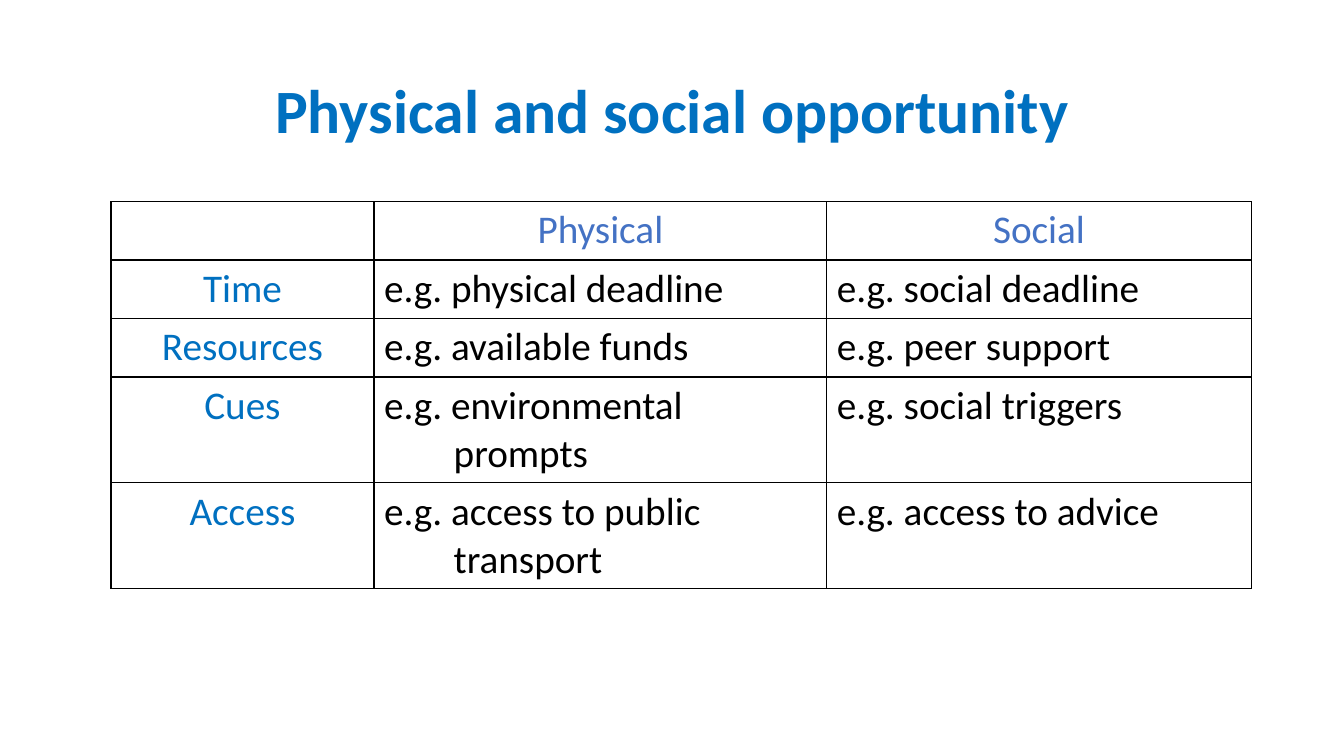
from dataclasses import dataclass

from lxml import etree
from pptx import Presentation
from pptx import util as u
from pptx.dml.color import RGBColor
from pptx.enum import text
from pptx.oxml import ns


@dataclass(frozen=True)
class Theme:
    """Fonts, colours and type sizes of the slide."""
    font: str = "Calibri"
    accent: str = "0070C0"
    header: str = "4472C4"
    ink: str = "000000"
    paper: str = "FFFFFF"
    title_size: int = 44
    table_size: int = 28


THEME = Theme()
COLUMN_WIDTHS = (2.61, 4.49, 4.21)
ROW_HEIGHTS = (0.58, 0.58, 0.58, 1.05, 1.05)
ROWS = (
    ("", "Physical", "Social"),
    ("Time", "e.g. physical deadline", "e.g. social deadline"),
    ("Resources", "e.g. available funds", "e.g. peer support"),
    ("Cues", "e.g. environmental prompts", "e.g. social triggers"),
    ("Access", "e.g. access to public transport", "e.g. access to advice"),
)


def add_run(p, words, size, color, bold=False):
    """Add one formatted run to a paragraph."""
    r = p.add_run()
    r.text = words
    r.font.name = THEME.font
    r.font.size = u.Pt(size)
    r.font.bold = bold
    r.font.color.rgb = RGBColor.from_string(color)


def add_title(s, words):
    """Place and fill the title placeholder."""
    sp = s.shapes.title
    sp.left, sp.top = u.Inches(0.92), u.Inches(0.4)
    sp.width, sp.height = u.Inches(11.5), u.Inches(1.45)
    tf = sp.text_frame
    tf.word_wrap = True
    tf.vertical_anchor = text.MSO_ANCHOR.MIDDLE
    p = tf.paragraphs[0]
    p.alignment = text.PP_ALIGN.CENTER
    p.line_spacing = 0.9
    add_run(p, words, THEME.title_size, THEME.accent, bold=True)


def set_borders(cell):
    """Draw a one-point line on each side of a cell."""
    tc_pr = cell._tc.get_or_add_tcPr()
    for i, side in enumerate(("a:lnL", "a:lnR", "a:lnT", "a:lnB")):
        ln = etree.Element(ns.qn(side), w=str(u.Pt(1)))
        fill = etree.SubElement(ln, ns.qn("a:solidFill"))
        etree.SubElement(fill, ns.qn("a:srgbClr"), val=THEME.ink)
        tc_pr.insert(i, ln)


def fill_cell(cell, words, row, col):
    """Format a cell as a heading or as a hanging example."""
    cell.fill.solid()
    cell.fill.fore_color.rgb = RGBColor.from_string(THEME.paper)
    set_borders(cell)
    if not words:
        return
    p = cell.text_frame.paragraphs[0]
    if row == 0 or col == 0:
        p.alignment = text.PP_ALIGN.CENTER
        color = THEME.header if row == 0 else THEME.accent
    else:
        indent = u.Inches(0.69)
        p_pr = p._p.get_or_add_pPr()
        p_pr.set("marL", str(indent))
        p_pr.set("indent", str(-indent))
        color = THEME.ink
    add_run(p, words, THEME.table_size, color)


def add_grid(s):
    """Add the table of opportunity examples."""
    table = s.shapes.add_table(
        len(ROWS), len(COLUMN_WIDTHS), u.Inches(1.1), u.Inches(2),
        u.Inches(sum(COLUMN_WIDTHS)), u.Inches(sum(ROW_HEIGHTS))).table
    table.first_row = table.horz_banding = False
    for column, width in zip(table.columns, COLUMN_WIDTHS):
        column.width = u.Inches(width)
    for row, height in zip(table.rows, ROW_HEIGHTS):
        row.height = u.Inches(height)
    for i, row in enumerate(ROWS):
        for j, words in enumerate(row):
            fill_cell(table.cell(i, j), words, i, j)


def main():
    """Build and save the slide."""
    prs = Presentation()
    prs.slide_width, prs.slide_height = u.Inches(13.33), u.Inches(7.5)
    s = prs.slides.add_slide(prs.slide_layouts[5])
    add_title(s, "Physical and social opportunity")
    add_grid(s)
    prs.save("out.pptx")


if __name__ == "__main__":
    main()
